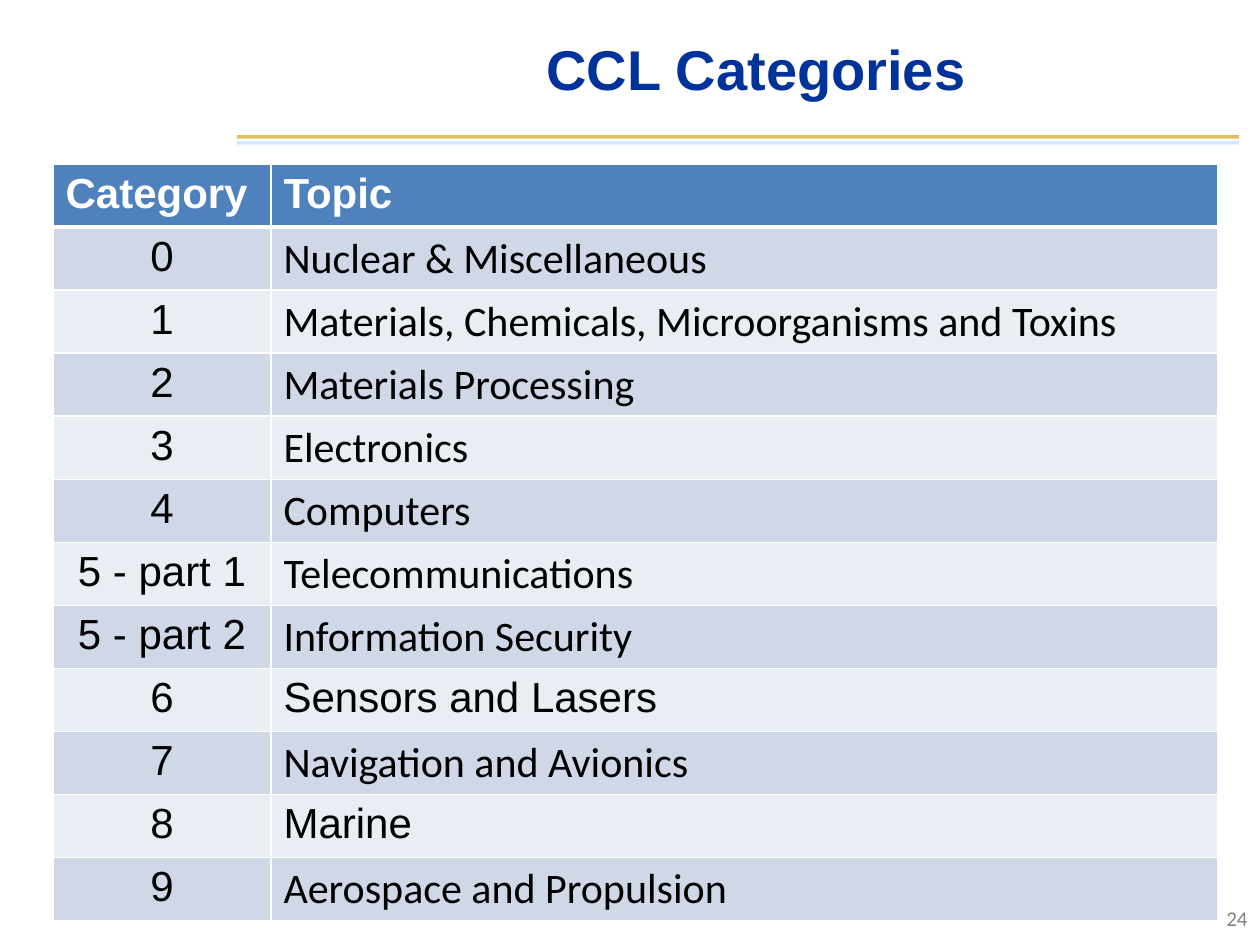
"""Build the CCL Categories slide: a title, two rules and a table of topics."""
from lxml import etree
from pptx import Presentation
from pptx.dml.color import RGBColor
from pptx.enum.shapes import MSO_CONNECTOR
from pptx.enum.text import MSO_ANCHOR, PP_ALIGN
from pptx.oxml import parse_xml
from pptx.oxml.ns import nsdecls, qn
from pptx.util import Pt

PX = 914400 / 126
LINE = MSO_CONNECTOR.STRAIGHT
MIDDLE = MSO_ANCHOR.MIDDLE
LEFT, CENTER, RIGHT = PP_ALIGN.LEFT, PP_ALIGN.CENTER, PP_ALIGN.RIGHT


def px(*nums):
    return [round(n * PX) for n in nums]


def write(frame, text, size, font, color, align, bold=False):
    para = frame.paragraphs[0]
    para.alignment = align
    run = para.add_run()
    run.text = text
    run.font.size = Pt(size)
    run.font.name = font
    run.font.bold = bold
    run.font.color.rgb = RGBColor.from_string(color)


prs = Presentation()
prs.slide_width, prs.slide_height = px(1260, 945)
slide = prs.slides.add_slide(prs.slide_layouts[6])
shapes = slide.shapes

for y, color, alpha in [(137, "CC9900", 62), (143, "99CCFF", 41)]:
    rule = shapes.add_connector(LINE, *px(237, y, 1239, y))
    rule.line.width = Pt(2)
    rule.line.color.rgb = RGBColor.from_string(color)
    tint = rule.line._ln.find(".//" + qn("a:srgbClr"))
    etree.SubElement(tint, qn("a:alpha"), val=str(alpha * 1000))
    etree.SubElement(rule._element.spPr, qn("a:effectLst"))

labels = [
    ((315, 0, 882, 136), "CCL Categories", 32, "Arial", "003399", CENTER, True),
    ((966, 893, 294, 50), "24", 12, "Calibri", "808080", RIGHT, False),
]
for place, *style in labels:
    frame = shapes.add_textbox(*px(*place)).text_frame
    frame.word_wrap = True
    frame.vertical_anchor = MIDDLE
    write(frame, *style)

rows = [
    ("Category", "Topic", "Arial"),
    ("0", "Nuclear & Miscellaneous", "Calibri"),
    ("1", "Materials, Chemicals, Microorganisms and Toxins", "Calibri"),
    ("2", "Materials Processing", "Calibri"),
    ("3", "Electronics", "Calibri"),
    ("4", "Computers", "Calibri"),
    ("5 - part 1", "Telecommunications", "Calibri"),
    ("5 - part 2", "Information Security", "Calibri"),
    ("6", "Sensors and Lasers", "Arial"),
    ("7", "Navigation and Avionics", "Calibri"),
    ("8", "Marine", "Arial"),
    ("9", "Aerospace and Propulsion", "Calibri"),
]
table = shapes.add_table(len(rows), 2, *px(53, 164, 1165, 757)).table
for col, width in zip(table.columns, px(218, 947)):
    col.width = width

for r, (code, topic, font) in enumerate(rows):
    head = r == 0
    table.rows[r].height = px(62 if head else 63)[0]
    fill = "4F81BD" if head else ("E9EDF4", "D0D8E8")[r % 2]
    ink = "FFFFFF" if head else "000000"
    pair = [(code, "Arial", LEFT if head else CENTER), (topic, font, LEFT)]
    for c, (text, face, align) in enumerate(pair):
        cell = table.cell(r, c)
        props = cell._tc.get_or_add_tcPr()
        for side in "LRTB":
            thick = (side == "B" and r == 0) or (side == "T" and r == 1)
            props.append(parse_xml(
                f'<a:ln{side} {nsdecls("a")} w="{Pt(3 if thick else 1)}"><a:solidFill>'
                f'<a:srgbClr val="FFFFFF"/></a:solidFill></a:ln{side}>'))
        cell.fill.solid()
        cell.fill.fore_color.rgb = RGBColor.from_string(fill)
        write(cell.text_frame, text, 24, face, ink, align, head)

prs.save("out.pptx")
